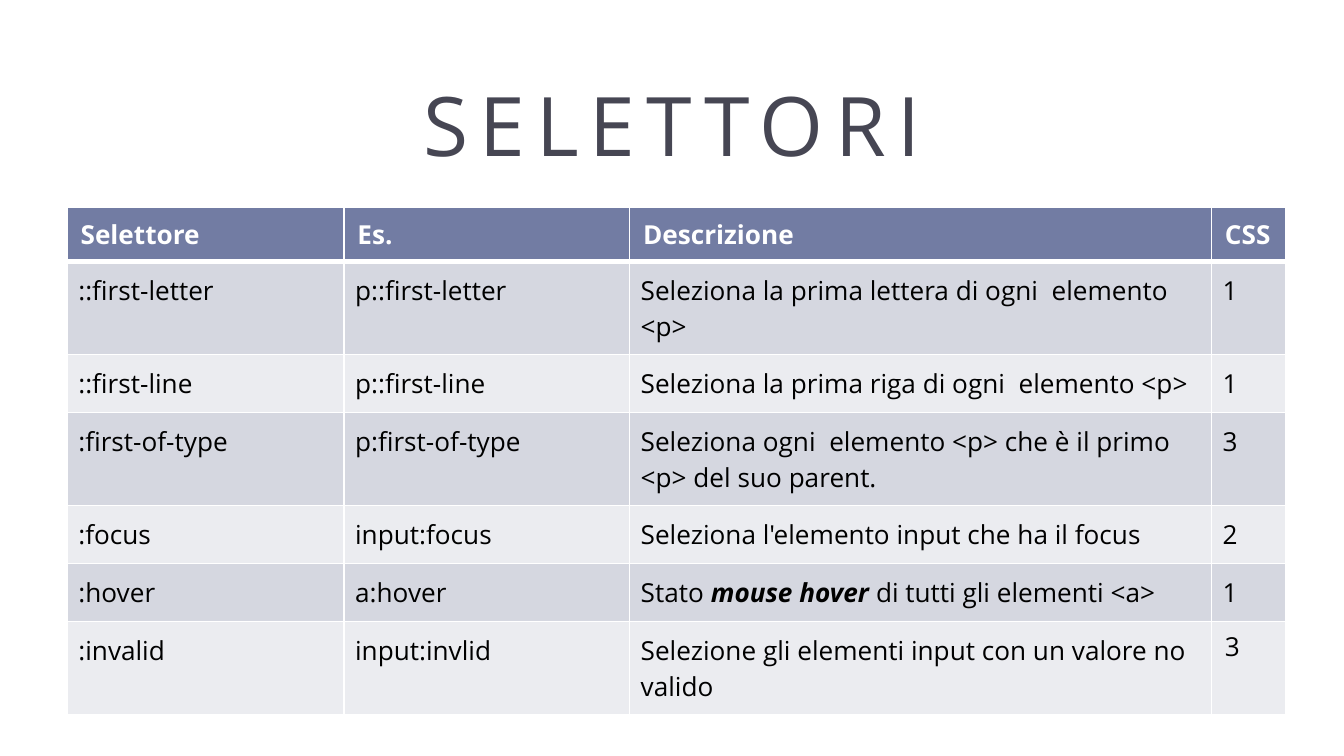
from lxml import etree
from pptx import Presentation
from pptx.dml.color import RGBColor
from pptx.enum.text import MSO_ANCHOR, PP_ALIGN
from pptx.oxml.ns import qn
from pptx.util import Pt

MIDDLE, TOP = MSO_ANCHOR.MIDDLE, MSO_ANCHOR.TOP
CENTER, LEFT = PP_ALIGN.CENTER, PP_ALIGN.LEFT

COLORS = {
    "title": "464653",
    "header": "727CA3",
    "odd": "D5D7E0",
    "even": "EBECF0",
    "text": "000000",
    "white": "FFFFFF",
}
FONT = "Open Sans"
BODY_INSET = 6
HEADER_ROW, ONE_LINE, TWO_LINES = 29.2, 31.1, 49.8
ROW_HEIGHTS = [HEADER_ROW, TWO_LINES, ONE_LINE, TWO_LINES, ONE_LINE, ONE_LINE,
               TWO_LINES]
HEADER = ["Selettore", "Es.", "Descrizione", "CSS"]
SELECTORS = [
    ["::first-letter", "p::first-letter",
     "Seleziona la prima lettera di ogni  elemento <p>", "1"],
    ["::first-line", "p::first-line",
     "Seleziona la prima riga di ogni  elemento <p>", "1"],
    [":first-of-type", "p:first-of-type",
     "Seleziona ogni  elemento <p> che è il primo <p> del suo parent.", "3"],
    [":focus", "input:focus", "Seleziona l'elemento input che ha il focus", "2"],
    [":hover", "a:hover",
     ["Stato ", ("mouse hover ", {"bold": True, "italic": True}),
      "di tutti gli elementi <a>"], "1"],
    [":invalid", "input:invlid",
     "Selezione gli elementi input con un valore no valido", "3"],
]


def write(tf, text, size=14, color="text", bold=False, italic=False,
          align=LEFT, spacing=0):
    """Fill the first paragraph; text is a string or a list of strings and
    (string, format) pairs."""
    p = tf.paragraphs[0]
    p.alignment = align
    for part in [text] if isinstance(text, str) else text:
        words, extra = (part, {}) if isinstance(part, str) else part
        r = p.add_run()
        r.text = words
        r.font.name = FONT
        r.font.size = Pt(size)
        r.font.bold = extra.get("bold", bold)
        r.font.italic = extra.get("italic", italic)
        r.font.color.rgb = RGBColor.from_string(COLORS[color])
        if spacing:
            r._r.get_or_add_rPr().set("spc", str(spacing * 100))


def set_borders(cell, color, bottom=1):
    """Draw 1 pt cell borders, with a chosen width below."""
    tcPr = cell._tc.get_or_add_tcPr()
    widths = {"a:lnL": 1, "a:lnR": 1, "a:lnT": 1, "a:lnB": bottom}
    for i, (tag, width) in enumerate(widths.items()):
        ln = etree.Element(qn(tag), w=str(Pt(width)))
        fill = etree.SubElement(ln, qn("a:solidFill"))
        etree.SubElement(fill, qn("a:srgbClr"), val=COLORS[color])
        tcPr.insert(i, ln)


class Deck:
    """Holds the presentation and its current slide."""

    def __init__(self, width, height):
        self.prs = Presentation()
        self.prs.slide_width, self.prs.slide_height = Pt(width), Pt(height)
        self.s = None

    def add_slide(self):
        self.s = self.prs.slides.add_slide(self.prs.slide_layouts[6])

    def title(self, text, x, y, w, h):
        tf = self.s.shapes.add_textbox(Pt(x), Pt(y), Pt(w), Pt(h)).text_frame
        tf.word_wrap = True
        tf.vertical_anchor = MIDDLE
        write(tf, text, size=44, color="title", align=CENTER, spacing=6)

    def cell(self, cell, text, fill, inset=None, anchor=TOP, bottom=1, **style):
        cell.fill.solid()
        cell.fill.fore_color.rgb = RGBColor.from_string(COLORS[fill])
        cell.vertical_anchor = anchor
        if inset is not None:
            cell.margin_left = cell.margin_right = Pt(inset)
            cell.margin_top = cell.margin_bottom = Pt(inset)
        set_borders(cell, "white", bottom)
        write(cell.text_frame, text, **style)

    def table(self, header, rows, x, y, col_widths, row_heights):
        table = self.s.shapes.add_table(
            len(row_heights), len(col_widths), Pt(x), Pt(y),
            Pt(sum(col_widths)), Pt(sum(row_heights))).table
        for col, width in zip(table.columns, col_widths):
            col.width = Pt(width)
        for row, height in zip(table.rows, row_heights):
            row.height = Pt(height)
        for c, text in enumerate(header):
            self.cell(table.cell(0, c), text, "header", anchor=MIDDLE,
                      bottom=3, color="white", bold=True)
        last = (len(rows), len(header) - 1)
        for i, row in enumerate(rows, 1):
            for c, text in enumerate(row):
                # The last cell keeps the default margins
                inset = None if (i, c) == last else BODY_INSET
                self.cell(table.cell(i, c), text, "odd" if i % 2 else "even", inset)


def main():
    deck = Deck(720, 405)
    deck.add_slide()
    deck.title("SELETTORI", 36, 32.4, 648, 67.7)
    deck.table(HEADER, SELECTORS, 36, 111, [148.3, 153, 311.8, 39.6], ROW_HEIGHTS)
    deck.prs.save("out.pptx")


if __name__ == "__main__":
    main()
